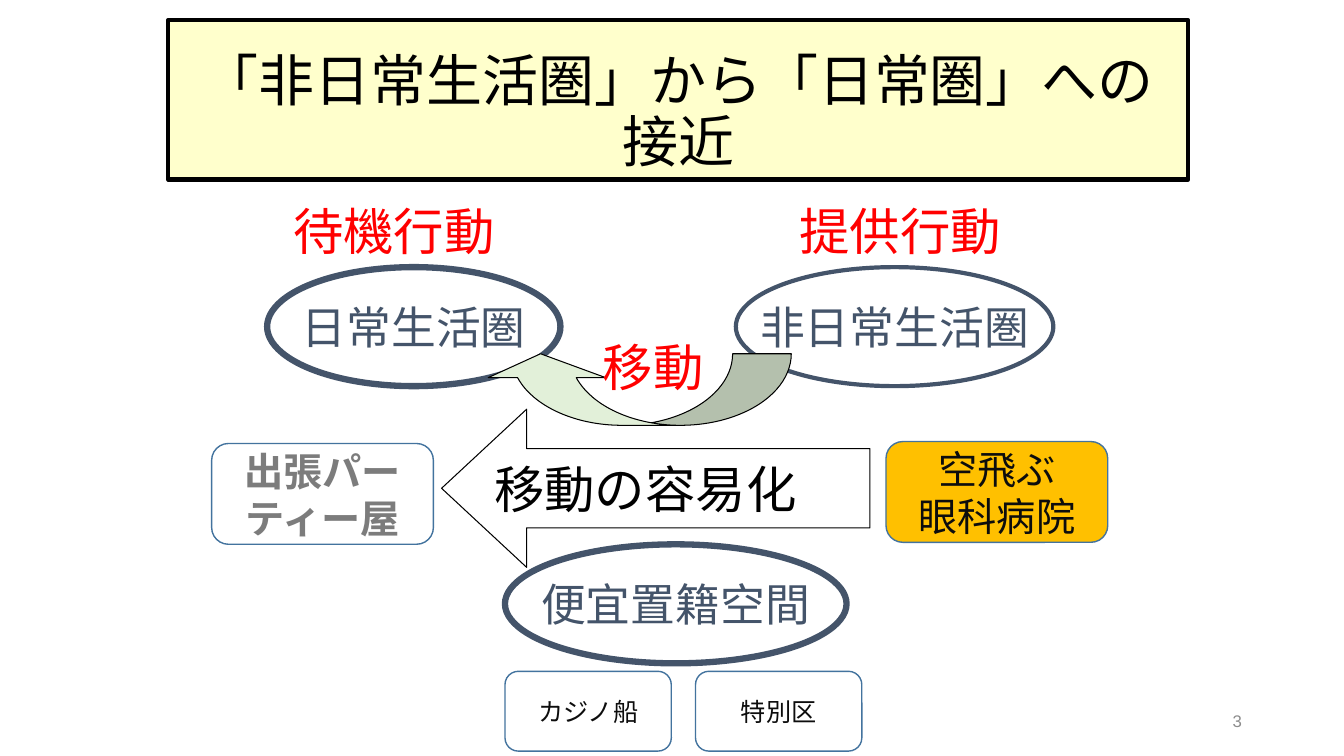
"""Build the slide on daily and non-daily living spheres approaching each other."""
from dataclasses import dataclass
from typing import Optional

import pptx
import pptx.dml.color
import pptx.enum.shapes
import pptx.enum.text
import pptx.util

SHAPE = pptx.enum.shapes.MSO_SHAPE
ALIGN = pptx.enum.text.PP_ALIGN
ANCHOR = pptx.enum.text.MSO_ANCHOR
AUTO_SIZE = pptx.enum.text.MSO_AUTO_SIZE

COLORS = {
    "black": "000000",
    "white": "FFFFFF",
    "cream": "FFFFCC",
    "slate": "44546A",
    "mint": "E2F0D9",
    "red": "FF0000",
    "amber": "FFC000",
    "steel": "43739E",
    "ink": "0D0D0D",
    "gray": "7C7C7C",
    "pale_gray": "8C8C8C",
}


@dataclass(frozen=True)
class Item:
    left: float
    top: float
    width: float
    height: float
    text: str = ""
    size: float = 18
    color: str = "ink"
    kind: Optional[SHAPE] = None
    fill: Optional[str] = None
    line: Optional[str] = None
    weight: float = 1
    align: ALIGN = ALIGN.CENTER
    anchor: ANCHOR = ANCHOR.MIDDLE
    wrap: bool = True
    fit: bool = False
    bold: bool = False
    font: str = "Calibri"
    spacing: Optional[float] = None
    rotation: float = 0
    adjustments: tuple[float, ...] = ()


def sphere(left: float, top: float, width: float, text: str, weight: float) -> Item:
    return Item(left, top, width, 85, text, 32, "slate", SHAPE.OVAL,
                line="slate", weight=weight, wrap=False)


def label(left: float, top: float, width: float, text: str) -> Item:
    return Item(left, top, width, 51, text, 36, "red", align=ALIGN.LEFT,
                anchor=ANCHOR.TOP, wrap=False, fit=True)


def service(left: float, top: float, text: str, color: str,
            fill: Optional[str] = None, bold: bool = False) -> Item:
    return Item(left, top, 158.4, 72, text, 28, color, SHAPE.ROUNDED_RECTANGLE,
                fill, "steel", bold=bold)


def example(left: float, text: str) -> Item:
    return Item(left, 479.5, 118.8, 57, text, kind=SHAPE.ROUNDED_RECTANGLE, line="steel")


ITEMS = [
    Item(678.2, 500.4, 216, 28.8, "3", 12, "pale_gray", align=ALIGN.RIGHT, font="Arial"),
    Item(120.2, 14.4, 728.6, 113.8, "「非日常生活圏」から「日常圏」への接近", 40, "black",
         SHAPE.RECTANGLE, "cream", "black", 3, anchor=ANCHOR.BOTTOM, spacing=0.9),
    sphere(190.8, 190.8, 209.5, "日常生活圏", 4.5),
    sphere(525.6, 190.8, 226.8, "非日常生活圏", 3),
    Item(344.2, 252.7, 221, 51.1, kind=SHAPE.CURVED_DOWN_ARROW, fill="mint", line="black",
         weight=0.75, rotation=180, adjustments=(0.82, 1.639, 0.333)),
    label(423.4, 236.2, 86.4, "移動"),
    Item(315.4, 292.3, 306, 113, "移動の容易化", 36, "black", SHAPE.LEFT_ARROW, "white",
         "black", 0.75, ALIGN.LEFT, wrap=False, adjustments=(0.5, 0.538)),
    label(563.8, 139.7, 159.8, "提供行動"),
    label(202.3, 139.7, 159.8, "待機行動"),
    sphere(360.7, 388.8, 244, "便宜置籍空間", 4.5),
    service(632.9, 315.4, "空飛ぶ\n眼科病院", "ink", "amber"),
    service(151.2, 316.8, "出張パーティー屋", "gray", bold=True),
    example(360.7, "カジノ船"),
    example(496.8, "特別区"),
]


def rgb(name: str) -> pptx.dml.color.RGBColor:
    return pptx.dml.color.RGBColor.from_string(COLORS[name])


def write_text(box: pptx.shapes.base.BaseShape, item: Item) -> None:
    frame = box.text_frame
    frame.text = item.text
    frame.word_wrap = item.wrap
    frame.vertical_anchor = item.anchor
    frame.auto_size = AUTO_SIZE.SHAPE_TO_FIT_TEXT if item.fit else AUTO_SIZE.NONE
    for para in frame.paragraphs:
        para.alignment = item.align
        para.line_spacing = item.spacing
        for span in para.runs:
            span.font.name = item.font
            span.font.size = pptx.util.Pt(item.size)
            span.font.bold = item.bold
            span.font.color.rgb = rgb(item.color)


def draw(slide: pptx.slide.Slide, item: Item) -> None:
    bounds = [pptx.util.Pt(value) for value in (item.left, item.top, item.width, item.height)]
    if item.kind is None:
        box = slide.shapes.add_textbox(*bounds)
    else:
        box = slide.shapes.add_shape(item.kind, *bounds)
        box.shadow.inherit = False
        box.rotation = item.rotation
        for index, value in enumerate(item.adjustments):
            box.adjustments[index] = value
        if item.fill:
            box.fill.solid()
            box.fill.fore_color.rgb = rgb(item.fill)
        else:
            box.fill.background()
        box.line.color.rgb = rgb(item.line)
        box.line.width = pptx.util.Pt(item.weight)
    if item.text:
        write_text(box, item)


def main() -> None:
    deck = pptx.Presentation()
    deck.slide_width = pptx.util.Pt(960)
    deck.slide_height = pptx.util.Pt(540)
    slide = deck.slides.add_slide(deck.slide_layouts[6])
    for item in ITEMS:
        draw(slide, item)
    deck.save("out.pptx")


if __name__ == "__main__":
    main()
